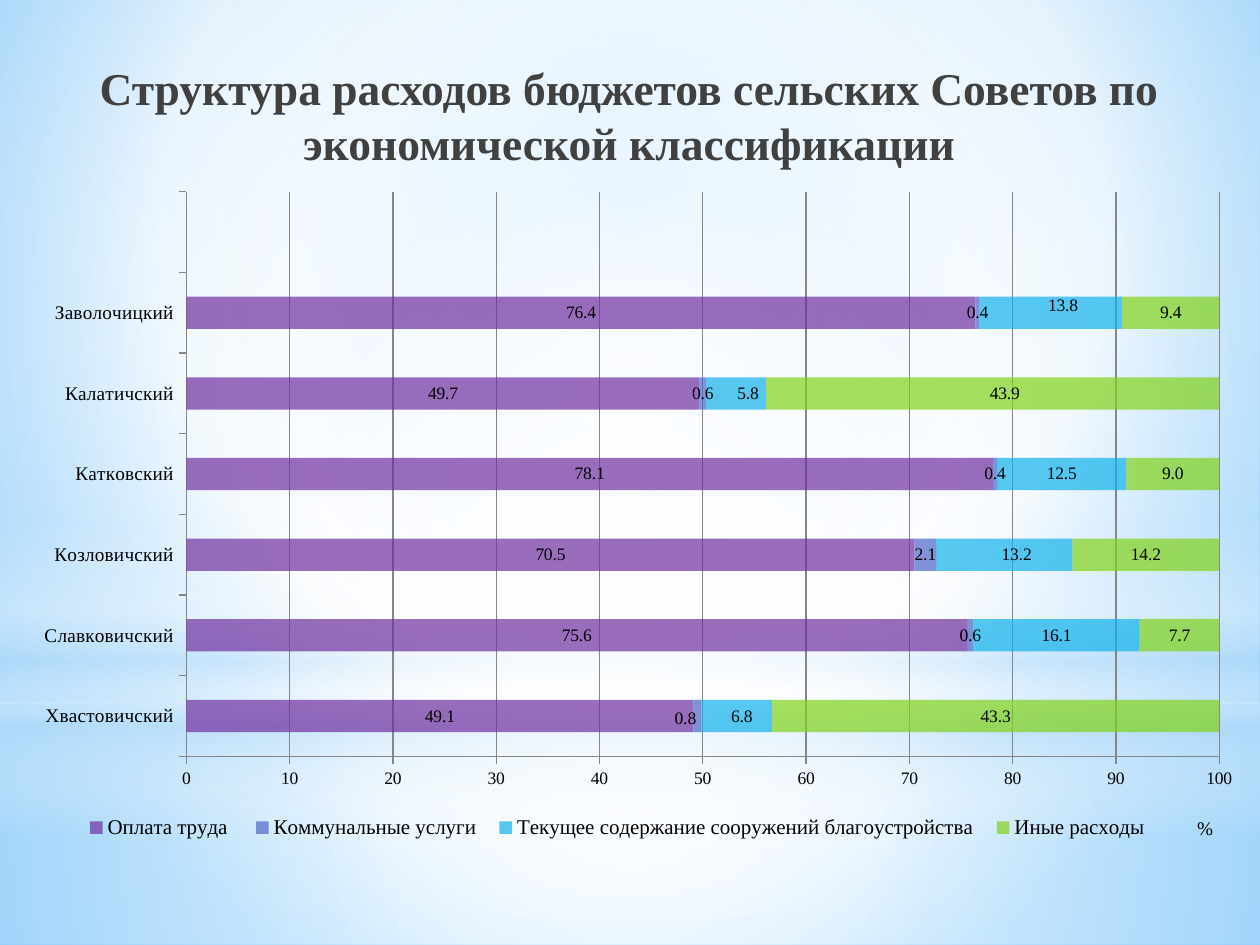
from lxml import etree
from pptx import Presentation
from pptx.chart.data import CategoryChartData
from pptx.dml.color import RGBColor
from pptx.enum.chart import XL_CHART_TYPE, XL_LEGEND_POSITION, XL_TICK_MARK
from pptx.enum.shapes import MSO_SHAPE
from pptx.enum.text import MSO_ANCHOR, PP_ALIGN
from pptx.oxml import parse_xml
from pptx.oxml.ns import nsdecls, qn
from pptx.util import Inches, Pt

STACKED_BAR = XL_CHART_TYPE.BAR_STACKED
LEGEND_BOTTOM = XL_LEGEND_POSITION.BOTTOM
TICK_OUT, TICK_NONE = XL_TICK_MARK.OUTSIDE, XL_TICK_MARK.NONE
RECTANGLE, OVAL = MSO_SHAPE.RECTANGLE, MSO_SHAPE.OVAL
MIDDLE, CENTER = MSO_ANCHOR.MIDDLE, PP_ALIGN.CENTER

WHITE = RGBColor(0xFF, 0xFF, 0xFF)
BLACK = RGBColor(0x00, 0x00, 0x00)
DARK_GRAY = RGBColor(0x40, 0x40, 0x40)
GRID_GRAY = RGBColor(0x86, 0x86, 0x86)
PALE_BLUE = RGBColor(0xB4, 0xDC, 0xFA)
SKY = RGBColor(0x9E, 0xD5, 0xFF)
DEEP_SKY = RGBColor(0x5B, 0xB9, 0xFF)
PURPLE = RGBColor(0x70, 0x30, 0xA0)
INDIGO = RGBColor(0x4E, 0x67, 0xC8)
CYAN = RGBColor(0x12, 0xB2, 0xEB)
GREEN = RGBColor(0x81, 0xD3, 0x1A)

FONT = "Times New Roman"
LABEL_FORMAT = "#,##0.0"
BAR_OPACITY = 70
CENTERED = (50, 50, 50, 50)

# The last category is an empty row at the top of the chart.
COUNCILS = ["Хвастовичский", "Славковичский", "Козловичский",
            "Катковский", "Калатичский", "Заволочицкий", ""]
# Name, colour, values, and label shifts by point as shares of the chart.
EXPENSES = [
    ("Оплата труда ", PURPLE, (49.1, 75.6, 70.5, 78.1, 49.7, 76.4, None), {}),
    ("Коммунальные услуги", INDIGO, (0.8, 0.6, 2.1, 0.4, 0.6, 0.4, None),
     {0: (-0.01, 0.004)}),
    ("Текущее содержание сооружений благоустройства", CYAN,
     (6.8, 16.1, 13.2, 12.5, 5.8, 13.8, None),
     {0: (0.004, 0), 2: (0.01, 0), 3: (0, 0), 4: (0.01, 0), 5: (0.01, -0.01)}),
    ("Иные расходы", GREEN, (43.3, 7.7, 14.2, 9, 43.9, 9.4, None),
     {4: (0.01, 0)}),
]


def gradient_fill(owner, fill, stops, angle=0, focus=None):
    """Give fill its (position, colour, opacity) stops, radial if focus is set."""
    fill.gradient()
    gradient = next(owner.iter(qn("a:gradFill")))
    for child in list(gradient):
        gradient.remove(child)
    stop_list = etree.SubElement(gradient, qn("a:gsLst"))
    for position, color, opacity in stops:
        stop = etree.SubElement(stop_list, qn("a:gs"), pos=str(position * 1000))
        paint = etree.SubElement(stop, qn("a:srgbClr"), val=str(color))
        etree.SubElement(paint, qn("a:alpha"), val=str(opacity * 1000))
    if focus:
        path = etree.SubElement(gradient, qn("a:path"), path="circle")
        sides = {side: str(share * 1000) for side, share in zip("ltrb", focus)}
        etree.SubElement(path, qn("a:fillToRect"), sides)
    else:
        etree.SubElement(gradient, qn("a:lin"), ang=str(angle * 60000), scaled="0")


def manual_layout(x, y, width=None, height=None, edge=True, inner=False):
    parts = ['<c:layoutTarget val="inner"/>'] if inner else []
    if edge:
        parts += ['<c:xMode val="edge"/>', '<c:yMode val="edge"/>']
    for tag, share in (("x", x), ("y", y), ("w", width), ("h", height)):
        if share is not None:
            parts.append(f'<c:{tag} val="{share}"/>')
    return parse_xml(f'<c:layout {nsdecls("c")}><c:manualLayout>'
                     f'{"".join(parts)}</c:manualLayout></c:layout>')


def set_layout(element, layout, before):
    """Put layout in element, ahead of the first child named in before."""
    for old in element.findall(qn("c:layout")):
        element.remove(old)
    names = [qn(name) for name in before]
    following = next(child for child in element if child.tag in names)
    following.addprevious(layout)


class SlideBuilder:
    """Holds the style and the slide; places are shares of the slide's size."""

    def __init__(self, deck):
        self.deck = deck
        self.slide = deck.slides.add_slide(deck.slide_layouts[5])

    def place(self, left, top, width, height):
        page_width, page_height = self.deck.slide_width, self.deck.slide_height
        return (int(left * page_width), int(top * page_height),
                int(width * page_width), int(height * page_height))

    def style_font(self, font, size, color=BLACK, bold=False):
        font.name, font.size, font.bold = FONT, Pt(size), bold
        font.color.rgb = color

    def background(self, stops, focus):
        fill = self.slide.background.fill
        gradient_fill(self.slide.element, fill, stops, focus=focus)

    def glow(self, kind, place, stops, **direction):
        shape = self.slide.shapes.add_shape(kind, *self.place(*place))
        shape.shadow.inherit = False
        shape.line.fill.background()
        gradient_fill(shape.element, shape.fill, stops, **direction)

    def title(self, text, place, size):
        title = self.slide.shapes.title
        title.left, title.top, title.width, title.height = self.place(*place)
        title.element.getparent().append(title.element)  # in front of the glows
        frame = title.text_frame
        frame.text, frame.word_wrap, frame.vertical_anchor = text, True, MIDDLE
        para = frame.paragraphs[0]
        para.alignment = CENTER
        self.style_font(para.font, size, DARK_GRAY, bold=True)

    def bar_chart(self, place, councils, expenses):
        data = CategoryChartData()
        data.categories = councils
        for name, _, values, _ in expenses:
            data.add_series(name, values)
        chart = self.slide.shapes.add_chart(
            STACKED_BAR, *self.place(*place), data).chart
        self.style_font(chart.font, 10)
        chart.has_title = False
        plot = chart.plots[0]
        plot.gap_width, plot.overlap, plot.vary_by_categories = 150, 100, False
        for series, (_, color, _, shifts) in zip(plot.series, expenses):
            self.bar_series(series, color, shifts)
        self.axes(chart)
        chart.has_legend = True
        legend = chart.legend
        legend.position, legend.include_in_layout = LEGEND_BOTTOM, False
        self.style_font(legend.font, 12)
        set_layout(legend._element, manual_layout(0.04, 0.85, 0.89, 0.05),
                   ["c:overlay"])
        set_layout(plot._element.getparent(),
                   manual_layout(0.132, 0.009, 0.846, 0.769, inner=True),
                   ["c:barChart"])

    def bar_series(self, series, color, shifts):
        fill = series.format.fill
        fill.solid()
        fill.fore_color.rgb = color
        paint = next(series._element.iter(qn("a:srgbClr")))
        etree.SubElement(paint, qn("a:alpha"), val=str(BAR_OPACITY * 1000))
        labels = series.data_labels
        labels.show_value = True
        labels.number_format, labels.number_format_is_linked = LABEL_FORMAT, False
        self.style_font(labels.font, 10)
        for index, shift in shifts.items():
            self.style_font(series.points[index].data_label.font, 10)
            label = series._element.xpath("c:dLbls/c:dLbl")[-1]
            label.insert(1, manual_layout(*shift, edge=False))
            label.insert(2, parse_xml(
                f'<c:numFmt {nsdecls("c")} formatCode="{LABEL_FORMAT}" '
                'sourceLinked="0"/>'))

    def axes(self, chart):
        councils, percent = chart.category_axis, chart.value_axis
        for axis, size in ((councils, 11), (percent, 10)):
            axis.major_tick_mark, axis.minor_tick_mark = TICK_OUT, TICK_NONE
            axis.format.line.color.rgb = GRID_GRAY
            self.style_font(axis.tick_labels.font, size)
        councils.has_major_gridlines = False
        percent.minimum_scale, percent.maximum_scale = 0, 100
        percent.major_unit = 10
        percent.has_major_gridlines = True
        percent.major_gridlines.format.line.color.rgb = GRID_GRAY
        percent.tick_labels.number_format = "#,##0"
        percent.tick_labels.number_format_is_linked = False
        title = percent.axis_title
        title.text_frame.text = "%"
        self.style_font(title.text_frame.paragraphs[0].font, 11)
        set_layout(title._element, manual_layout(0.957, 0.855), ["c:overlay"])


def main():
    deck = Presentation()
    deck.slide_width, deck.slide_height = Inches(10), Inches(7.5)
    page = SlideBuilder(deck)
    page.background([(0, SKY, 100), (60, WHITE, 100), (100, DEEP_SKY, 100)],
                    focus=(20, 10, 20, 60))
    page.glow(RECTANGLE, (0, 0.744, 1, 0.256), focus=CENTERED, stops=[
        (0, WHITE, 91), (37, WHITE, 76), (100, PALE_BLUE, 79)])
    page.glow(RECTANGLE, (0, 0, 1, 0.744), focus=CENTERED, stops=[
        (0, WHITE, 89), (48, WHITE, 62), (100, PALE_BLUE, 79)])
    page.glow(RECTANGLE, (0, 0.55, 1, 0.333), angle=90, stops=[
        (0, WHITE, 0), (29, WHITE, 30), (45, PALE_BLUE, 40),
        (55, WHITE, 26), (65, PALE_BLUE, 60), (100, WHITE, 0)])
    page.glow(OVAL, (0, 0.233, 1, 0.744), focus=CENTERED, stops=[
        (0, WHITE, 100), (56, WHITE, 0)])
    page.title("Структура расходов бюджетов сельских Советов по "
               "экономической классификации", (0.035, 0.048, 0.929, 0.147), 26)
    page.bar_chart((0.02, 0.196, 0.969, 0.777), COUNCILS, EXPENSES)
    deck.save("out.pptx")


if __name__ == "__main__":
    main()
